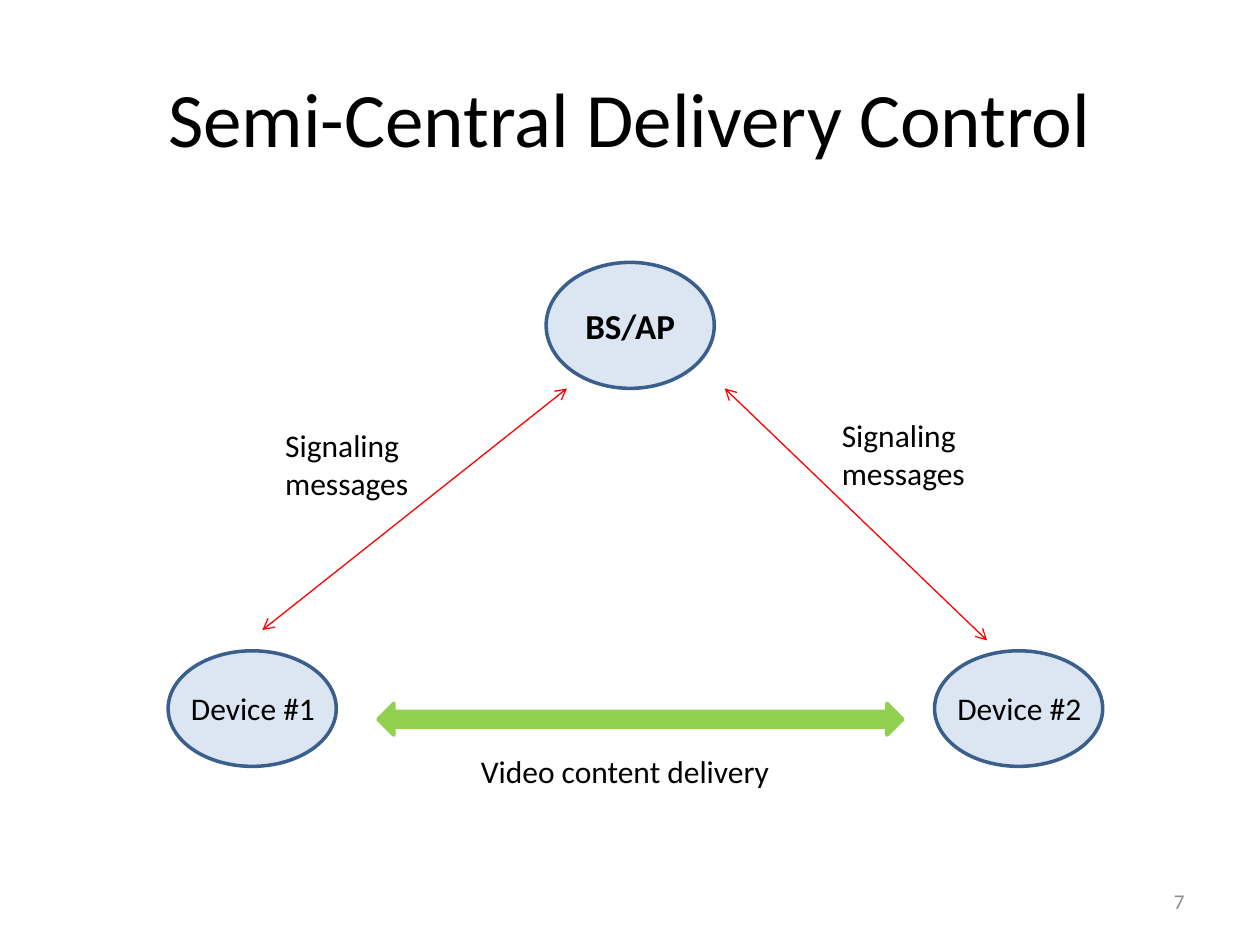
from dataclasses import dataclass

from lxml import etree
from pptx import Presentation
from pptx.dml.color import RGBColor
from pptx.enum import shapes, text
from pptx.oxml import ns
from pptx.util import Cm, Pt


@dataclass(frozen=True)
class Theme:
    font: str = "Calibri"
    ink: str = "000000"
    muted: str = "8C8C8C"
    node_fill: str = "DCE6F2"
    node_line: str = "3A5F8C"
    video: str = "92D050"
    signal: str = "FF0000"
    title: int = 44
    hub: int = 20
    body: int = 18
    small: int = 12
    outline: float = 2
    thin: float = 0.75


T = Theme()
LEFT, CENTER, RIGHT = text.PP_ALIGN.LEFT, text.PP_ALIGN.CENTER, text.PP_ALIGN.RIGHT
TOP, MIDDLE = text.MSO_ANCHOR.TOP, text.MSO_ANCHOR.MIDDLE


def rgb(value):
    return RGBColor.from_string(value)


def write(sp, words, size=T.body, color=T.ink, align=LEFT, anchor=TOP, bold=False):
    tf = sp.text_frame
    tf.word_wrap = True
    tf.vertical_anchor = anchor
    p = tf.paragraphs[0]
    p.alignment = align
    r = p.add_run()
    r.text = words
    r.font.name, r.font.size, r.font.bold = T.font, Pt(size), bold
    r.font.color.rgb = rgb(color)


def add_label(s, words, x, y, w, h, **style):
    sp = s.shapes.add_textbox(Cm(x), Cm(y), Cm(w), Cm(h))
    write(sp, words, **style)


def add_block(s, kind, x, y, w, h, fill, line):
    sp = s.shapes.add_shape(kind, Cm(x), Cm(y), Cm(w), Cm(h))
    sp.shadow.inherit = False
    sp.fill.solid()
    sp.fill.fore_color.rgb = rgb(fill)
    sp.line.color.rgb = rgb(line)
    sp.line.width = Pt(T.outline)
    return sp


def add_node(s, x, y, h):
    return add_block(s, shapes.MSO_SHAPE.OVAL, x, y, 3.39, h, T.node_fill, T.node_line)


def add_signal(s, x1, y1, x2, y2):
    c = s.shapes.add_connector(shapes.MSO_CONNECTOR.STRAIGHT,
                               Cm(x1), Cm(y1), Cm(x2), Cm(y2))
    c.line.color.rgb = rgb(T.signal)
    c.line.width = Pt(T.thin)
    ln = c.line._get_or_add_ln()
    for end in ("a:headEnd", "a:tailEnd"):
        etree.SubElement(ln, ns.qn(end), type="arrow")
    etree.SubElement(c._element.spPr, ns.qn("a:effectLst"))


def add_title(s, words):
    sp = s.shapes.title
    sp.left, sp.top, sp.width, sp.height = Cm(1.27), Cm(0.76), Cm(22.86), Cm(3.18)
    write(sp, words, size=T.title, align=CENTER, anchor=MIDDLE)


def main():
    prs = Presentation()
    prs.slide_width, prs.slide_height = Cm(25.4), Cm(19.05)
    s = prs.slides.add_slide(prs.slide_layouts[5])

    # Title and page number
    add_title(s, "Semi-Central Delivery Control")
    add_label(s, "7", 18.2, 17.66, 5.93, 1.01, size=T.small, color=T.muted,
              align=RIGHT, anchor=MIDDLE)

    # Base station and the two devices
    hub = add_node(s, 11.01, 5.29, 2.54)
    write(hub, "BS/AP", size=T.hub, align=CENTER, anchor=MIDDLE, bold=True)
    for name, x in (("Device #1", 3.39), ("Device #2", 18.84)):
        add_node(s, x, 13.12, 2.33)
        add_label(s, name, x + 0.21, 13.76, 3.18, 1.03)

    # Video path between the devices
    add_block(s, shapes.MSO_SHAPE.LEFT_RIGHT_ARROW, 7.62, 14.18, 10.58, 0.64,
              T.video, T.video)
    add_label(s, "Video content delivery", 8.47, 15.03, 8.26, 1.03, align=CENTER)

    # Signaling between the base station and each device
    add_signal(s, 14.61, 7.83, 19.9, 12.91)
    add_signal(s, 11.43, 7.83, 5.29, 12.7)
    for x, y in ((16.72, 8.26), (5.5, 8.47)):
        add_label(s, "Signaling messages", x, y, 3.18, 1.8)

    prs.save("out.pptx")


if __name__ == "__main__":
    main()
